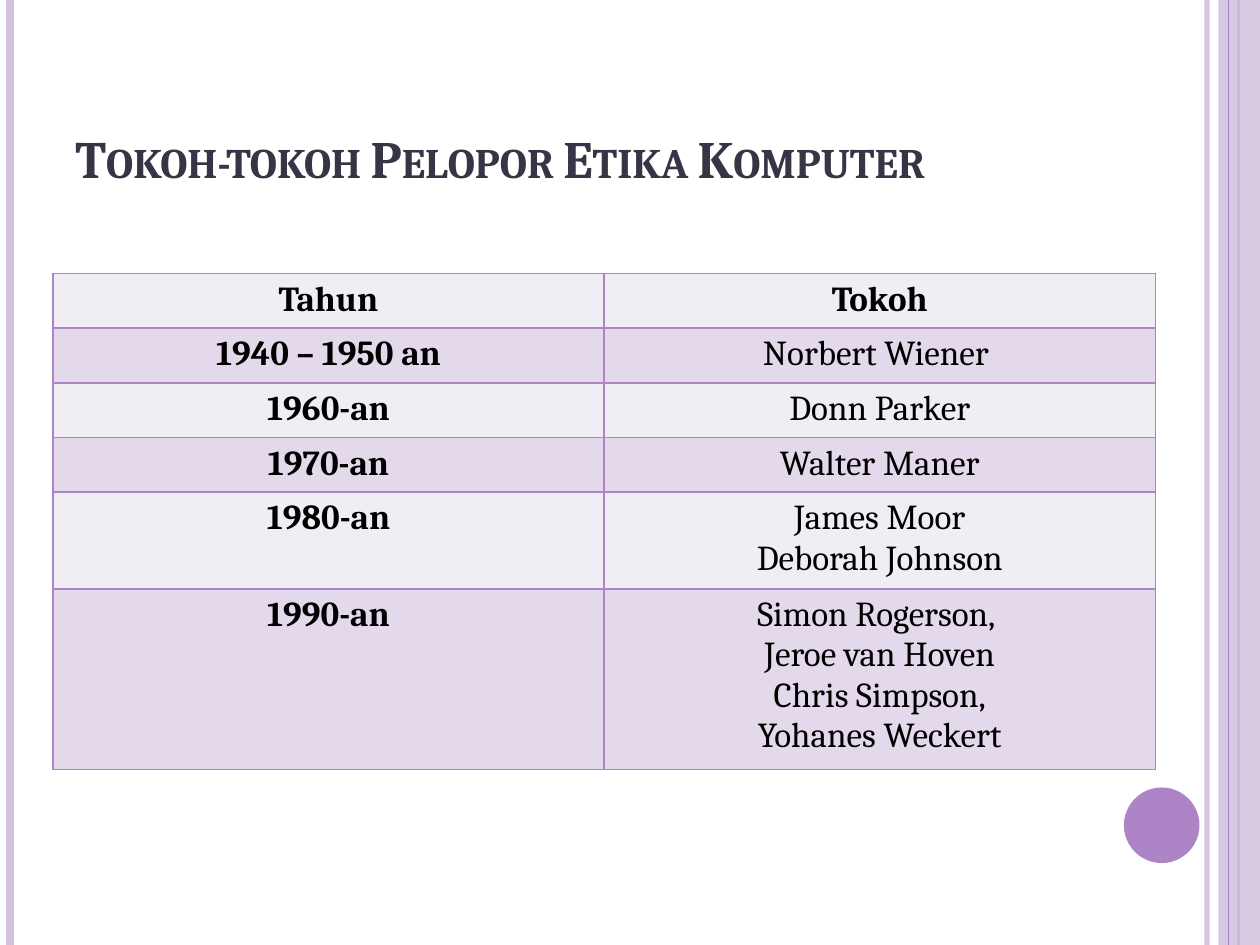
from lxml import etree
from pptx import Presentation
from pptx.dml.color import RGBColor
from pptx.enum import shapes, text
from pptx.oxml import ns
from pptx.util import Inches, Pt

COLORS = {
    "accent": "AD84C6",
    "pale": "D3C2DF",
    "title": "373545",
    "body": "000000",
    "light_row": "F1EDF5",
    "dark_row": "E3D9EA",
}
FONT = "Cambria"
PIONEERS = [
    ("Tahun", ["Tokoh"]),
    ("1940 – 1950 an", ["Norbert Wiener "]),
    ("1960-an", ["Donn Parker"]),
    ("1970-an", ["Walter Maner"]),
    ("1980-an", ["James Moor", "Deborah Johnson"]),
    ("1990-an", ["Simon Rogerson, ", "Jeroe van Hoven", "Chris Simpson,", "Yohanes Weckert"]),
]


def rgb(name):
    return RGBColor.from_string(COLORS[name])


def set_opacity(element, percent):
    color = element.find(".//" + ns.qn("a:srgbClr"))
    etree.SubElement(color, ns.qn("a:alpha"), val=str(percent * 1000))


def style(paragraph, size, color, bold):
    font = paragraph.font
    font.name, font.size, font.bold = FONT, Pt(size), bold
    font.color.rgb = rgb(color)
    return font


def add_stripe(slide, x, height, color, width, opacity=100):
    stripe = slide.shapes.add_connector(
        shapes.MSO_CONNECTOR.STRAIGHT, Inches(x), 0, Inches(x), Inches(height))
    stripe.line.color.rgb = rgb(color)
    stripe.line.width = Pt(width)
    properties = stripe._element.spPr
    if opacity < 100:
        set_opacity(properties, opacity)
    etree.SubElement(properties, ns.qn("a:effectLst"))


def add_plain_shape(slide, kind, left, top, width, height, color):
    shape = slide.shapes.add_shape(
        kind, Inches(left), Inches(top), Inches(width), Inches(height))
    shape.shadow.inherit = False
    shape.fill.solid()
    shape.fill.fore_color.rgb = rgb(color)
    shape.line.fill.background()
    return shape


def add_frame(slide, width, height):
    add_stripe(slide, width - 0.42, height, "pale", 3, 93)
    add_stripe(slide, 0.08, height, "pale", 4.5)
    add_stripe(slide, width - 0.17, height, "accent", 1.5)
    band = add_plain_shape(slide, shapes.MSO_SHAPE.RECTANGLE,
                           width - 0.33, 0, 0.33, height, "pale")
    set_opacity(band._element.spPr, 87)
    add_stripe(slide, width - 0.25, height, "accent", 0.75)
    add_plain_shape(slide, shapes.MSO_SHAPE.OVAL,
                    width - 1.08, height - 1.25, 0.6, 0.6, "accent")


def add_title(slide, left, top, width, height):
    title = slide.shapes.add_textbox(
        Inches(left), Inches(top), Inches(width), Inches(height))
    frame = title.text_frame
    frame.word_wrap = True
    frame.vertical_anchor = text.MSO_ANCHOR.BOTTOM
    frame.text = "Tokoh-tokoh Pelopor Etika Komputer"
    font = style(frame.paragraphs[0], 30, "title", True)
    font._element.set("cap", "small")


def add_borders(cell):
    properties = cell._tc.get_or_add_tcPr()
    for side in ("lnL", "lnR", "lnT", "lnB"):
        border = etree.SubElement(properties, ns.qn("a:" + side), w=str(Pt(1)))
        fill = etree.SubElement(border, ns.qn("a:solidFill"))
        etree.SubElement(fill, ns.qn("a:srgbClr"), val=COLORS["accent"])


def fill_cell(cell, lines, bold, color):
    cell.text = "\n".join(lines)
    for paragraph in cell.text_frame.paragraphs:
        paragraph.alignment = text.PP_ALIGN.CENTER
        style(paragraph, 20, "body", bold)
    add_borders(cell)
    cell.fill.solid()
    cell.fill.fore_color.rgb = rgb(color)


def add_pioneers(slide, left, top, width):
    heights = [0.1 + 0.32 * len(names) for _, names in PIONEERS]
    table = slide.shapes.add_table(
        len(PIONEERS), 2, Inches(left), Inches(top),
        Inches(width), Inches(sum(heights))).table
    for index, (years, names) in enumerate(PIONEERS):
        table.rows[index].height = Inches(heights[index])
        color = "dark_row" if index % 2 else "light_row"
        fill_cell(table.cell(index, 0), [years], True, color)
        fill_cell(table.cell(index, 1), names, index == 0, color)


def main():
    deck = Presentation()
    deck.slide_width, deck.slide_height = Inches(10), Inches(7.5)
    slide = deck.slides.add_slide(deck.slide_layouts[6])
    add_frame(slide, 10, 7.5)
    add_title(slide, 0.5, 0.3, 8.17, 1.25)
    add_pioneers(slide, 0.42, 2.17, 8.75)
    deck.save("out.pptx")


if __name__ == "__main__":
    main()
